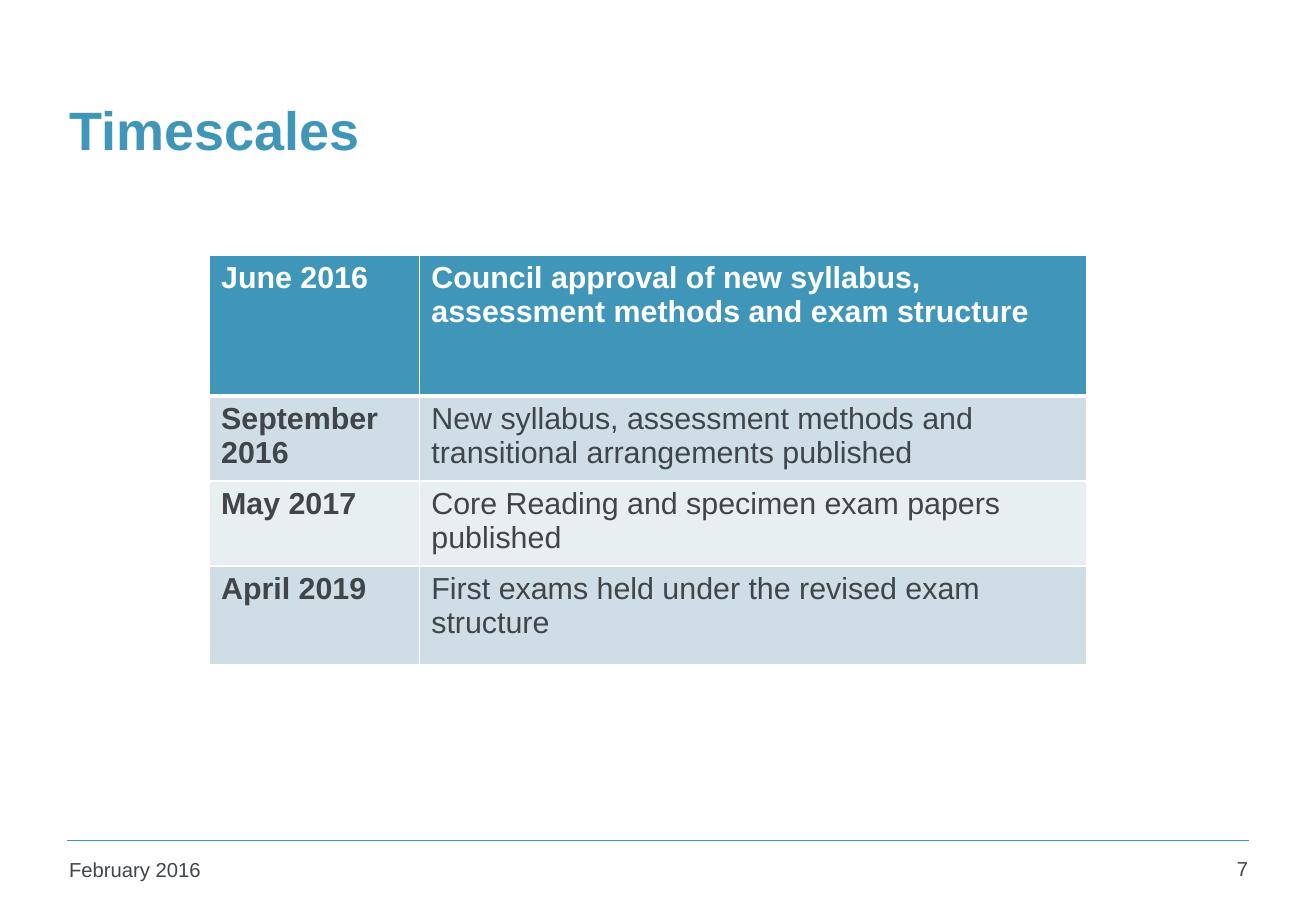
"""Build the Timescales slide: a dated milestone table above a ruled footer."""
import pptx
import pptx.dml.color
import pptx.enum.shapes
import pptx.enum.text
import pptx.oxml
import pptx.oxml.ns
import pptx.util
from dataclasses import dataclass

TITLE = "Timescales"
FOOTER_DATE = "February 2016"
PAGE_NUMBER = "7"
MILESTONES = [
    ("June 2016", "Council approval of new syllabus, assessment methods and exam structure"),
    ("September 2016", "New syllabus, assessment methods and transitional arrangements published"),
    ("May 2017", "Core Reading and specimen exam papers published"),
    ("April 2019", "First exams held under the revised exam structure"),
]

SLIDE_SIZE = (10.83, 7.5)
TITLE_BOX = (0.47, 0.44, 9.82, 1.25)
DATE_BOX = (0.47, 7.01, 2.39, 0.36)
NUMBER_BOX = (9.6, 7.0, 0.77, 0.37)
FOOTER_RULE = (0.55, 6.92, 10.28, 6.92)
TABLE_ORIGIN = (1.72, 2.1)
COLUMN_WIDTHS = (1.73, 5.49)
ROW_HEIGHTS = (1.16, 0.66, 0.66, 0.81)


@dataclass(frozen=True)
class Theme:
    font: str = "Arial"
    accent: str = "4096B8"
    text: str = "3F4548"
    white: str = "FFFFFF"
    bands: tuple = ("CFDDE6", "E8EFF3")
    title_size: int = 32
    table_size: int = 18
    footer_size: int = 12
    thin: int = 1
    thick: int = 3


THEME = Theme()


def inches(values):
    return [pptx.util.Inches(value) for value in values]


def rgb(value):
    return pptx.dml.color.RGBColor.from_string(value)


def write(text_frame, text, size, color, bold=False, align=pptx.enum.text.PP_ALIGN.LEFT):
    text_frame.text = text
    text_frame.word_wrap = True
    paragraph = text_frame.paragraphs[0]
    paragraph.alignment = align
    paragraph.font.name = THEME.font
    paragraph.font.size = pptx.util.Pt(size)
    paragraph.font.bold = bold
    paragraph.font.color.rgb = rgb(color)


def add_title(slide):
    title = slide.shapes.title
    title.left, title.top, title.width, title.height = inches(TITLE_BOX)
    write(title.text_frame, TITLE, THEME.title_size, THEME.accent, bold=True)
    title.text_frame.vertical_anchor = pptx.enum.text.MSO_ANCHOR.MIDDLE


def add_footer(slide):
    rule = slide.shapes.add_connector(
        pptx.enum.shapes.MSO_CONNECTOR.STRAIGHT, *inches(FOOTER_RULE))
    rule.line.color.rgb = rgb(THEME.accent)
    rule.line.width = pptx.util.Pt(THEME.thin)
    rule._element.spPr.append(pptx.oxml.parse_xml(
        f"<a:effectLst {pptx.oxml.ns.nsdecls('a')}/>"))
    alignment = pptx.enum.text.PP_ALIGN
    for box, text, align in ((DATE_BOX, FOOTER_DATE, alignment.LEFT),
                             (NUMBER_BOX, PAGE_NUMBER, alignment.RIGHT)):
        shape = slide.shapes.add_textbox(*inches(box))
        write(shape.text_frame, text, THEME.footer_size, THEME.text, align=align)


def set_borders(cell, top, bottom):
    properties = cell._tc.get_or_add_tcPr()
    widths = {"lnL": THEME.thin, "lnR": THEME.thin, "lnT": top, "lnB": bottom}
    for index, (side, width) in enumerate(widths.items()):
        properties.insert(index, pptx.oxml.parse_xml(
            f'<a:{side} {pptx.oxml.ns.nsdecls("a")} w="{pptx.util.Pt(width)}">'
            f'<a:solidFill><a:srgbClr val="{THEME.white}"/></a:solidFill></a:{side}>'))


def add_milestones(slide):
    size = (sum(COLUMN_WIDTHS), sum(ROW_HEIGHTS))
    table = slide.shapes.add_table(
        len(MILESTONES), len(COLUMN_WIDTHS), *inches(TABLE_ORIGIN + size)).table
    for column, width in zip(table.columns, inches(COLUMN_WIDTHS)):
        column.width = width
    for row, height in zip(table.rows, inches(ROW_HEIGHTS)):
        row.height = height
    for row_index, milestone in enumerate(MILESTONES):
        header = row_index == 0
        fill = THEME.accent if header else THEME.bands[(row_index - 1) % 2]
        color = THEME.white if header else THEME.text
        for column_index, text in enumerate(milestone):
            cell = table.cell(row_index, column_index)
            cell.fill.solid()
            cell.fill.fore_color.rgb = rgb(fill)
            write(cell.text_frame, text, THEME.table_size, color,
                  bold=header or column_index == 0)
            set_borders(cell, top=THEME.thick if row_index == 1 else THEME.thin,
                        bottom=THEME.thick if header else THEME.thin)


def main():
    presentation = pptx.Presentation()
    presentation.slide_width, presentation.slide_height = inches(SLIDE_SIZE)
    slide = presentation.slides.add_slide(
        presentation.slide_layouts.get_by_name("Title Only"))
    add_title(slide)
    add_footer(slide)
    add_milestones(slide)
    presentation.save("out.pptx")


if __name__ == "__main__":
    main()
